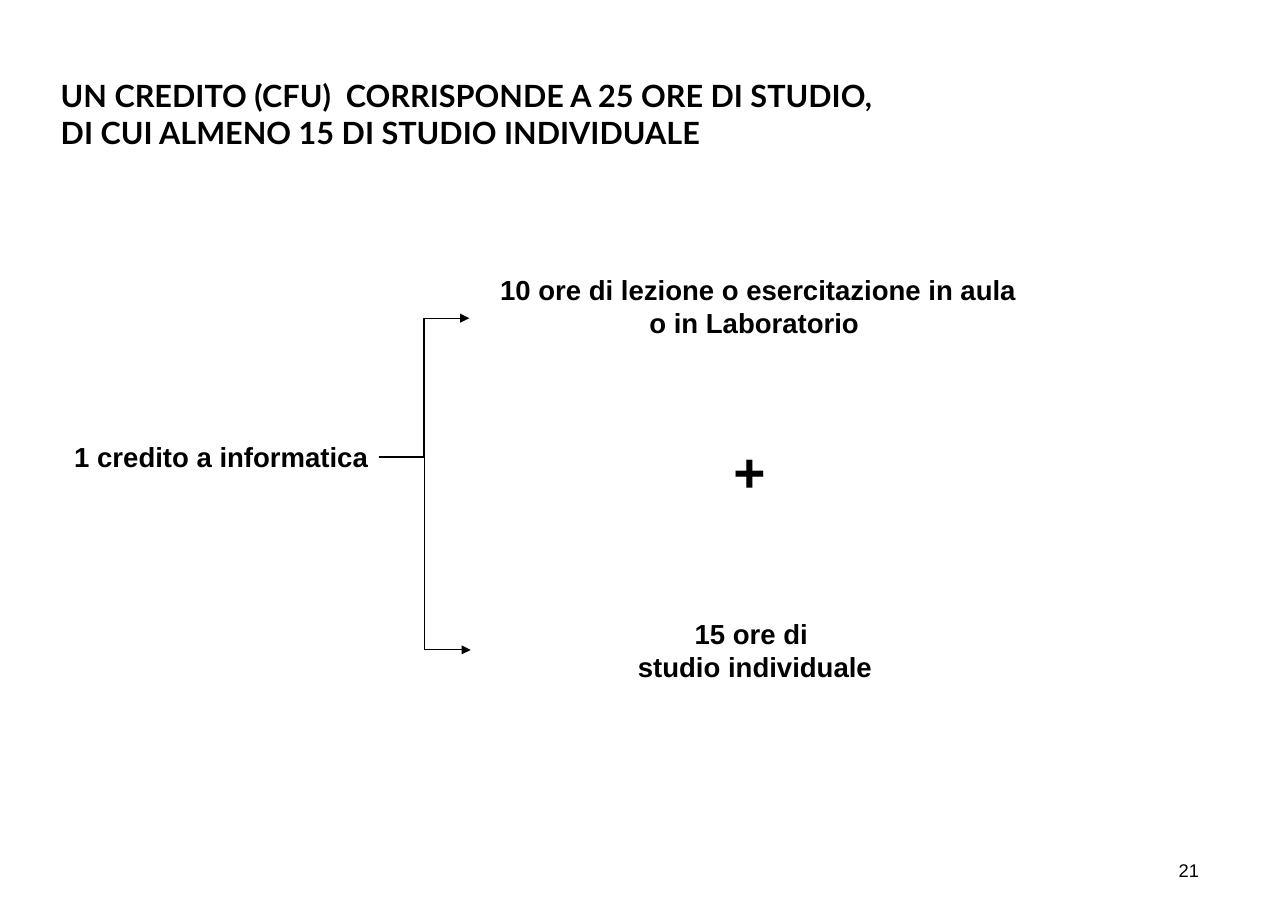
"""Build the slide that explains how the hours of one study credit are split."""
import lxml.etree
import pptx
import pptx.dml.color
import pptx.enum.shapes
import pptx.enum.text
import pptx.oxml
import pptx.oxml.ns
import pptx.util

Cm = pptx.util.Cm
ALIGN = pptx.enum.text.PP_ALIGN
ANCHOR = pptx.enum.text.MSO_ANCHOR
BLACK = pptx.dml.color.RGBColor(0x00, 0x00, 0x00)
WHITE = pptx.dml.color.RGBColor(0xFF, 0xFF, 0xFF)
BLANK_LINE = 0.57


def write(frame, text, *, size=18, font="Arial", bold=True, align=ALIGN.CENTER,
          anchor=ANCHOR.MIDDLE, wrap=False, insets=(0.25, 0.13, 0.25, 0.13)):
    frame.word_wrap = wrap
    frame.auto_size = pptx.enum.text.MSO_AUTO_SIZE.NONE
    frame.vertical_anchor = anchor
    (frame.margin_left, frame.margin_top,
     frame.margin_right, frame.margin_bottom) = map(Cm, insets)
    frame.text = text
    for paragraph in frame.paragraphs:
        paragraph.alignment = align
        paragraph.font.name = font
        paragraph.font.size = pptx.util.Pt(size)
        paragraph.font.bold = bold
        paragraph.font.color.rgb = BLACK


class CreditSlide:
    def __init__(self, deck):
        self.slide = deck.slides.add_slide(deck.slide_layouts[5])
        self.shapes = self.slide.shapes

    def title(self, text, left, top, width, height):
        heading = self.shapes.title
        heading.left, heading.top = Cm(left), Cm(top)
        heading.width, heading.height = Cm(width), Cm(height)
        write(heading.text_frame, text, size=20, font="Lato", align=ALIGN.LEFT,
              anchor=ANCHOR.TOP, wrap=True, insets=(0.28, 0.15, 0.28, 0.15))

    def number(self, text, left, top, width, height):
        label = self.shapes.add_textbox(Cm(left), Cm(top), Cm(width), Cm(height))
        write(label.text_frame, text, size=12, bold=False, align=ALIGN.RIGHT,
              anchor=ANCHOR.TOP, wrap=True, insets=(0, 0, 0, 0))

    def box(self, text, left, top, width, height, *, opacity=100, lift=0, size=18):
        panel = self.shapes.add_shape(pptx.enum.shapes.MSO_SHAPE.RECTANGLE,
                                      Cm(left), Cm(top), Cm(width), Cm(height))
        panel.shadow.inherit = False
        panel.fill.solid()
        panel.fill.fore_color.rgb = WHITE
        panel.line.fill.background()
        if opacity < 100:
            color = panel.fill._xPr.find(".//" + pptx.oxml.ns.qn("a:srgbClr"))
            alpha = lxml.etree.SubElement(color, pptx.oxml.ns.qn("a:alpha"))
            alpha.set("val", str(opacity * 1000))
        write(panel.text_frame, text, size=size, insets=(0.25, 0.13, 0.25, 0.13 + lift))
        return panel

    def arrow(self, source, target):
        branch = self.shapes.add_connector(pptx.enum.shapes.MSO_CONNECTOR.ELBOW, 0, 0, 0, 0)
        branch.begin_connect(source, 3)
        branch.end_connect(target, 1)
        branch.line.color.rgb = BLACK
        branch.line.width = pptx.util.Pt(0.75)
        head = lxml.etree.SubElement(branch.line._get_or_add_ln(),
                                     pptx.oxml.ns.qn("a:tailEnd"))
        head.set("type", "triangle")
        lxml.etree.SubElement(branch._element.spPr, pptx.oxml.ns.qn("a:effectLst"))


def main():
    deck = pptx.Presentation()
    deck.slide_width, deck.slide_height = Cm(29.69), Cm(21.01)
    page = CreditSlide(deck)
    page.number("21", 21.82, 19.81, 5.82, 0.51)
    page.title("UN CREDITO (CFU)  CORRISPONDE A 25 ORE DI STUDIO,\n"
               "DI CUI ALMENO 15 DI STUDIO INDIVIDUALE", 1.12, 1.63, 23.01, 1.98)
    credit = page.box("1 credito a informatica", 1.47, 8.76, 7.26, 3.56, opacity=60)
    lessons = page.box("10 ore di lezione o esercitazione in aula\no in Laboratorio ",
                       10.82, 5.56, 13.31, 3.56, lift=BLANK_LINE)
    study = page.box("15 ore di \nstudio individuale", 10.85, 13.21, 13.11, 3.56)
    for hours in (lessons, study):
        page.arrow(credit, hours)
    page.box("+", 16.54, 10.29, 1.47, 1.7, lift=BLANK_LINE, size=36)
    deck.save("out.pptx")


if __name__ == "__main__":
    main()
